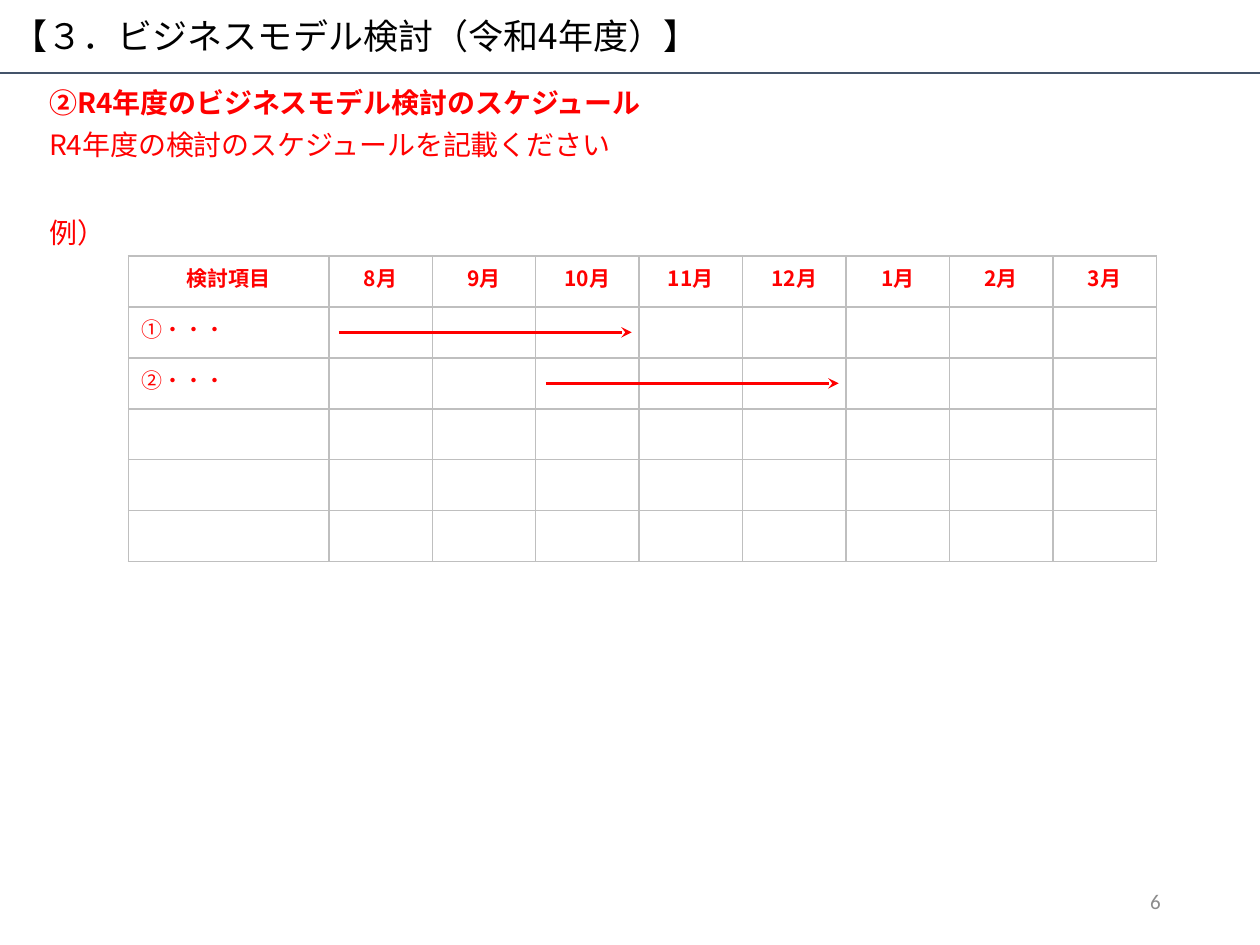
from lxml.etree import SubElement as Sub
from pptx import Presentation
from pptx.dml.color import RGBColor
from pptx.enum.shapes import MSO_CONNECTOR as Conn
from pptx.enum.text import MSO_ANCHOR as Anchor, MSO_AUTO_SIZE as Fit, PP_ALIGN as Align
from pptx.oxml import parse_xml
from pptx.oxml.ns import nsdecls, qn
from pptx.util import Inches, Pt

W, H = 10, 7.5
RED, GREY, NAVY = "FF0000", "BFBFBF", "44546A"
SANS = "Noto Sans CJK JP"

# Schedule grid, in inches
LEFT, TOP, WIDE, HIGH = 1.02, 2.03, 8.16, 2.43
ITEM = 1.59
MONTHS = ["8月", "9月", "10月", "11月", "12月", "1月", "2月", "3月"]
ITEMS = ["①・・・", "②・・・", "", "", ""]
MONTH = (WIDE - ITEM) / len(MONTHS)
ROW = HIGH / (len(ITEMS) + 1)


def color(hexa):
    return RGBColor.from_string(hexa)


class Page:
    def __init__(self, deck):
        self.slide = deck.slides.add_slide(deck.slide_layouts[1])

    def place(self, shape, x, y, w, h):
        shape.left, shape.top = Inches(x), Inches(y)
        shape.width, shape.height = Inches(w), Inches(h)

    def style(self, para, size, hexa=RED, bold=False, face=SANS, align=Align.LEFT):
        font = para.font
        font.size, font.bold, font.name = Pt(size), bold, face
        font.color.rgb = color(hexa)
        Sub(font._element, qn("a:ea")).set("typeface", face)
        para.alignment = align

    def title(self, text):
        shape = self.slide.shapes.title
        self.place(shape, 0, 0, W, 0.61)
        frame = shape.text_frame
        frame.text = text
        frame.auto_size, frame.vertical_anchor = Fit.NONE, Anchor.MIDDLE
        para = frame.paragraphs[0]
        para.line_spacing = 0.9
        self.style(para, 20, "000000")

    def body(self, lines):
        """Fill the body with (text, bold, space before) lines without bullets."""
        shape = self.slide.placeholders[1]
        self.place(shape, 0.29, 0.69, 9.44, 4.17)
        frame = shape.text_frame
        frame.auto_size, frame.margin_top = Fit.NONE, Inches(0.02)
        frame.text = "\n".join(text for text, _, _ in lines)
        for para, (_, bold, gap) in zip(frame.paragraphs, lines):
            para.line_spacing, para.space_before = 0.9, Pt(gap)
            self.style(para, 16, bold=bold)
            props = para._p.get_or_add_pPr()
            props.set("marL", "0")
            props.set("indent", "0")
            props.find(qn("a:defRPr")).addprevious(
                parse_xml(f"<a:buNone {nsdecls('a')}/>"))

    def number(self, text):
        box = self.slide.shapes.add_textbox(0, 0, 0, 0)
        self.place(box, 7.06, 6.95, 2.25, 0.4)
        frame = box.text_frame
        frame.word_wrap, frame.vertical_anchor = True, Anchor.MIDDLE
        frame.text = text
        self.style(frame.paragraphs[0], 12, "8C8C8C", face="Calibri", align=Align.RIGHT)

    def line(self, x, y, end, hexa, width, head=False):
        """Draw a level line from x to end, with an arrowhead if asked."""
        link = self.slide.shapes.add_connector(
            Conn.STRAIGHT, Inches(x), Inches(y), Inches(end), Inches(y))
        link.line.color.rgb, link.line.width = color(hexa), Pt(width)
        if head:
            Sub(link.line._get_or_add_ln(), qn("a:tailEnd")).set("type", "stealth")
        Sub(link._element.spPr, qn("a:effectLst"))

    def border(self, cell):
        props = cell._tc.get_or_add_tcPr()
        for spot, side in enumerate(("lnL", "lnR", "lnT", "lnB")):
            props.insert(spot, parse_xml(
                f'<a:{side} {nsdecls("a")} w="{Pt(1)}"><a:solidFill>'
                f'<a:srgbClr val="{GREY}"/></a:solidFill></a:{side}>'))

    def table(self, rows):
        grid = self.slide.shapes.add_table(
            len(rows), len(rows[0]), Inches(LEFT), Inches(TOP),
            Inches(WIDE), Inches(HIGH)).table
        grid.first_row = grid.horz_banding = False
        for i, col in enumerate(grid.columns):
            col.width = Inches(MONTH if i else ITEM)
        for r, row in enumerate(rows):
            grid.rows[r].height = Inches(ROW)
            for c, text in enumerate(row):
                cell = grid.cell(r, c)
                cell.text = text
                cell.fill.background()
                self.border(cell)
                self.style(cell.text_frame.paragraphs[0], 12, bold=r == 0,
                           align=Align.LEFT if r else Align.CENTER)

    def span(self, row, first, count):
        """Draw an arrow over count months, from the month at index first."""
        x = LEFT + ITEM + first * MONTH
        self.line(x + 0.08, TOP + (row + 0.5) * ROW, x + count * MONTH - 0.06,
                  RED, 2, head=True)


def main():
    deck = Presentation()
    deck.slide_width, deck.slide_height = Inches(W), Inches(H)
    page = Page(deck)
    page.title("【３．ビジネスモデル検討（令和4年度）】")
    page.body([("②R4年度のビジネスモデル検討のスケジュール", True, 0),
               ("R4年度の検討のスケジュールを記載ください", False, 6.5),
               ("例）", False, 33)])
    page.line(0, 0.58, W, NAVY, 1.5)
    page.number("6")
    blank = [""] * len(MONTHS)
    page.table([["検討項目"] + MONTHS] + [[item] + blank for item in ITEMS])
    page.span(1, 0, 3)
    page.span(2, 2, 3)
    deck.save("out.pptx")


if __name__ == "__main__":
    main()
